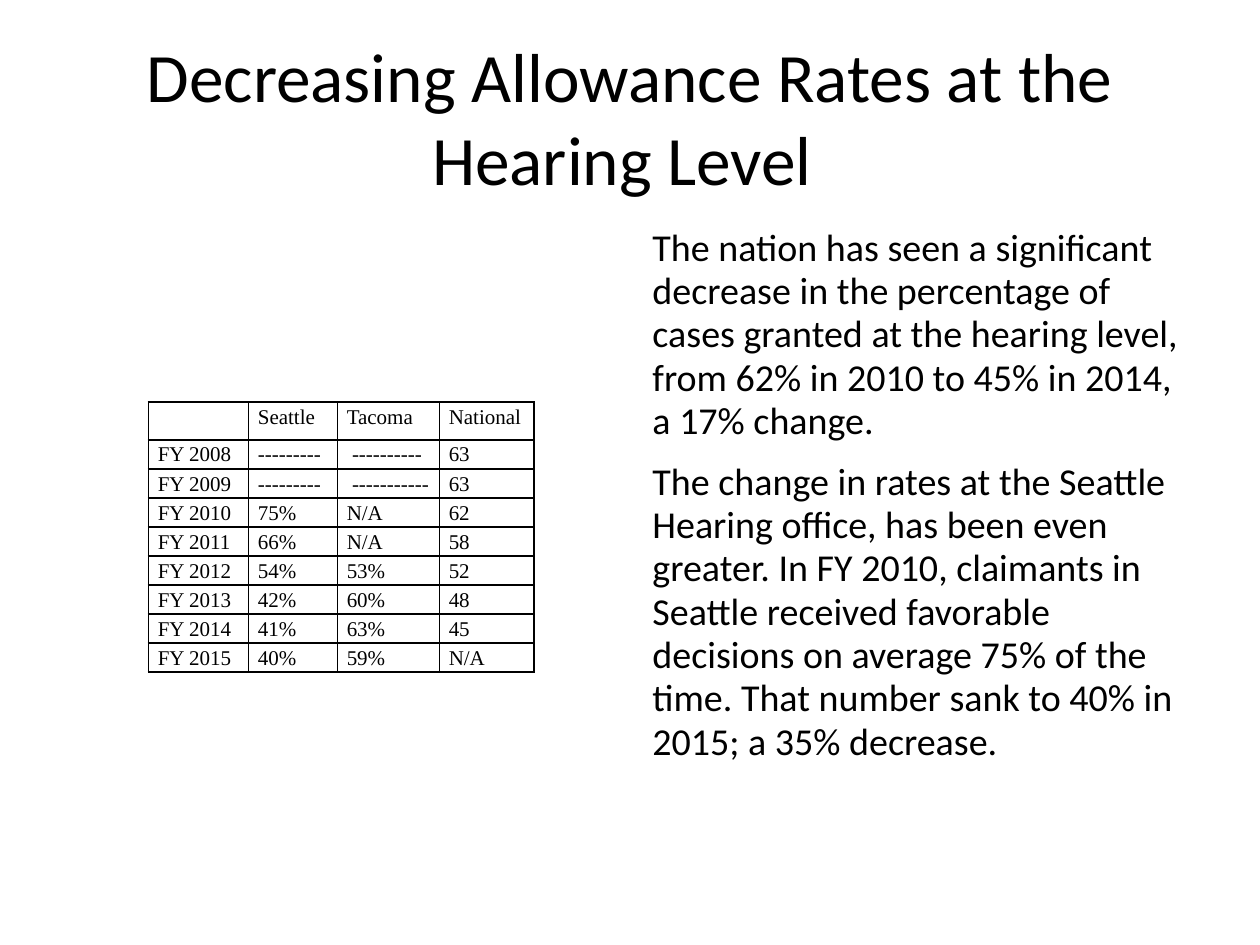
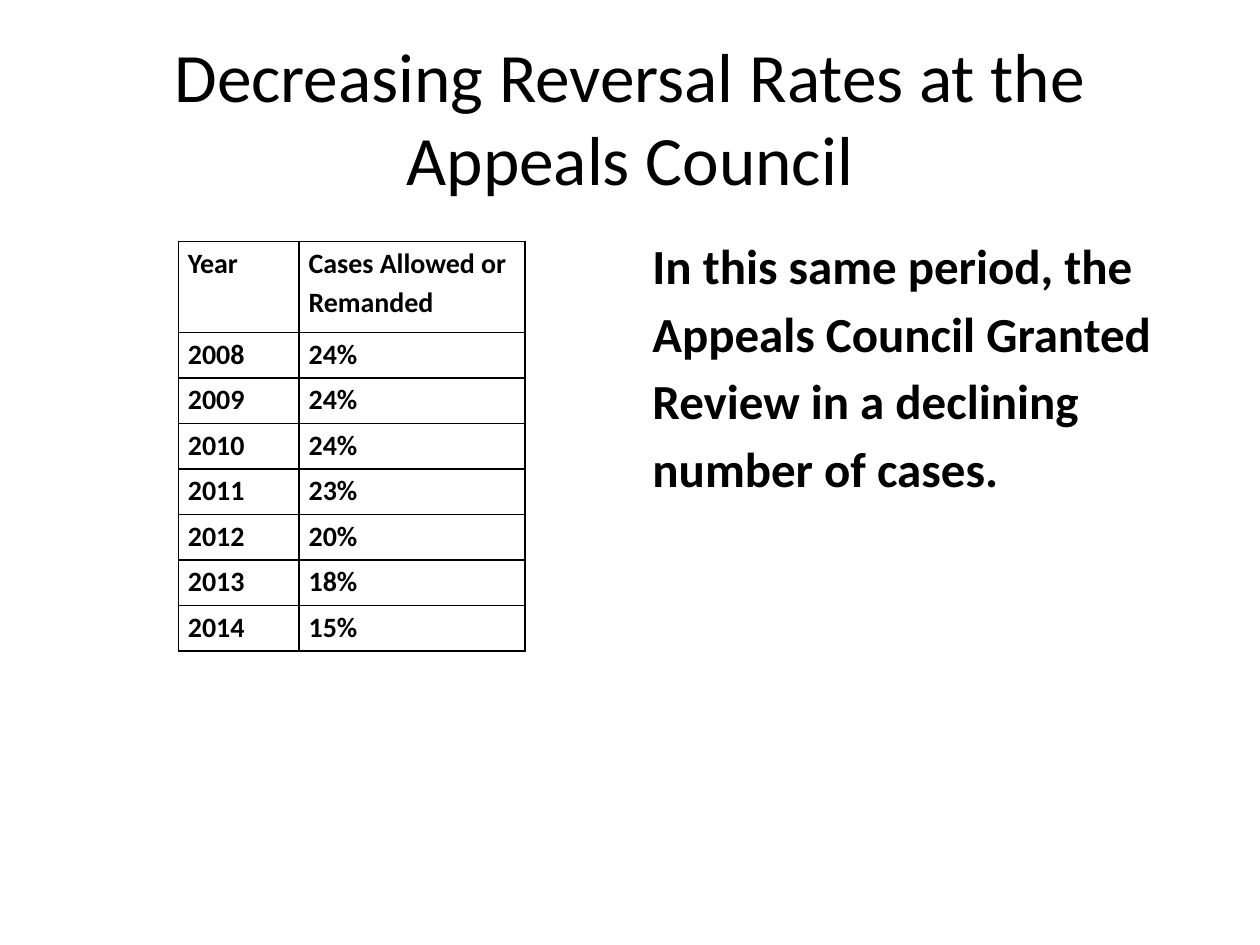
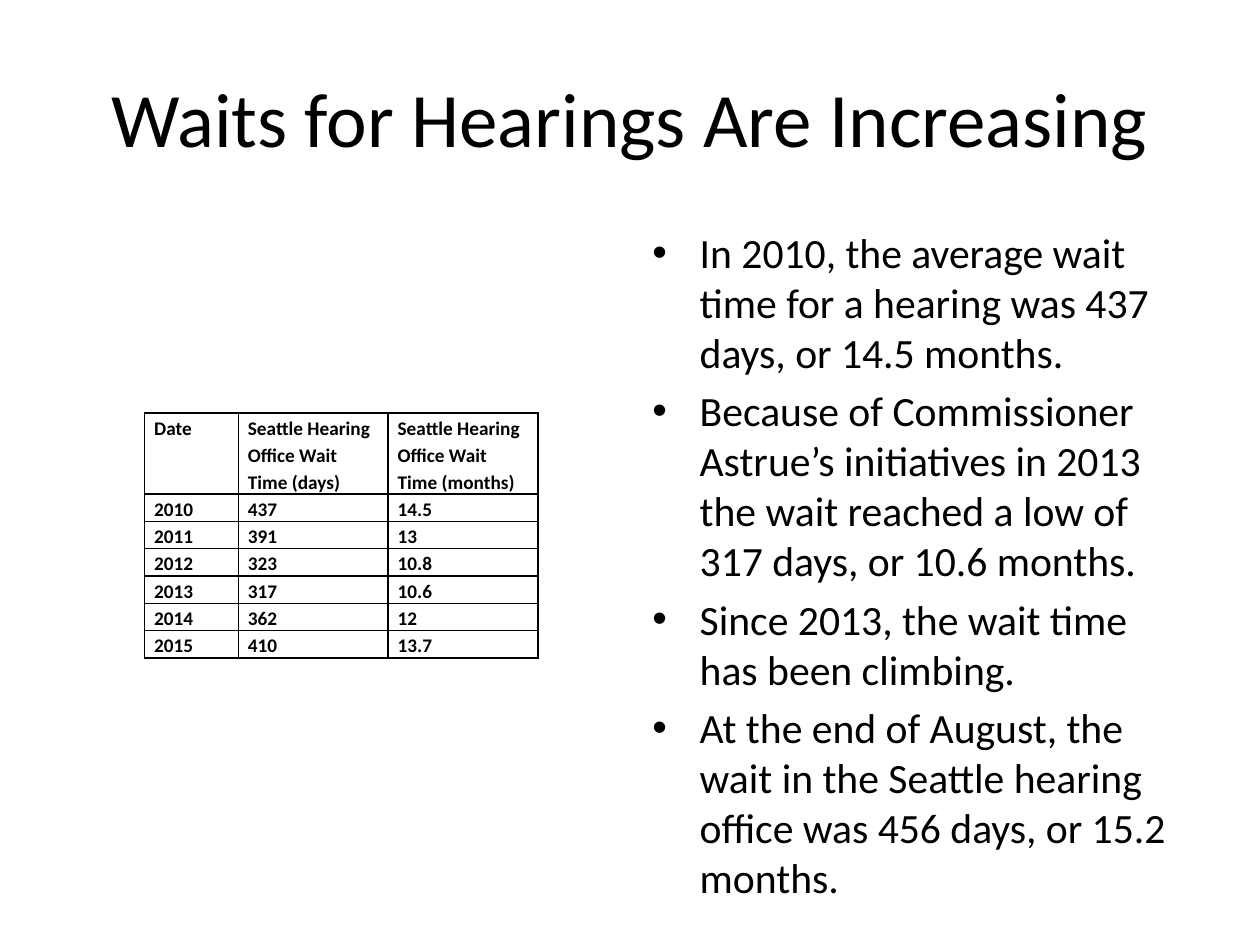
from dataclasses import dataclass
from lxml import etree
from pptx import Presentation
from pptx.dml.color import RGBColor
from pptx.enum import text as t
from pptx.oxml import ns
from pptx.util import Pt


@dataclass(frozen=True)
class Theme:
    ink: str = "000000"
    sans: str = "Calibri"
    serif: str = "Times New Roman"
    title: float = 39.6
    large: float = 44
    body: float = 21.7
    list: float = 23.8
    strong: float = 28
    rule: float = 1
    pad: float = 5.4
    indent: float = 27


THEME = Theme()
HEAD = (36, 21.6, 648, 90)
SIDE = (365.76, 126, 318.24, 356.4)


def write(frame, lines, size, font=THEME.sans, bold=False, align=t.PP_ALIGN.LEFT,
          lead=1.0, before=0, after=0, bullet=False):
    frame.word_wrap = True
    for i, line in enumerate(lines):
        para = frame.add_paragraph() if i else frame.paragraphs[0]
        para.alignment = align
        para.line_spacing = lead
        para.space_before = Pt(before)
        para.space_after = Pt(after)
        run = para.add_run()
        run.text = line
        run.font.size = Pt(size)
        run.font.name = font
        run.font.bold = bold
        run.font.color.rgb = RGBColor.from_string(THEME.ink)
        if bullet:
            props = para._p.get_or_add_pPr()
            props.set("marL", str(Pt(THEME.indent)))
            props.set("indent", str(-Pt(THEME.indent)))
            etree.SubElement(props, ns.qn("a:buFont"), typeface="Arial")
            etree.SubElement(props, ns.qn("a:buChar"), char="•")


def add_text(slide, box, lines, anchor=t.MSO_ANCHOR.TOP, **style):
    frame = slide.shapes.add_textbox(*map(Pt, box)).text_frame
    frame.vertical_anchor = anchor
    write(frame, lines, **style)


def add_rules(cell):
    props = cell._tc.get_or_add_tcPr()
    for side in ("lnL", "lnR", "lnT", "lnB"):
        line = etree.SubElement(props, ns.qn("a:" + side), w=str(Pt(THEME.rule)))
        fill = etree.SubElement(line, ns.qn("a:solidFill"))
        etree.SubElement(fill, ns.qn("a:srgbClr"), val=THEME.ink)


def add_grid(slide, spot, widths, rows, head, step, **style):
    heights = [head] + [step] * (len(rows) - 1)
    box = (*spot, sum(widths), sum(heights))
    table = slide.shapes.add_table(len(rows), len(widths), *map(Pt, box)).table
    table.first_row = table.horz_banding = False
    for col, width in zip(table.columns, widths):
        col.width = Pt(width)
    for row, height, words in zip(table.rows, heights, rows):
        row.height = Pt(height)
        for cell, word in zip(row.cells, words):
            cell.margin_left = cell.margin_right = Pt(THEME.pad)
            cell.margin_top = cell.margin_bottom = 0
            add_rules(cell)
            cell.fill.background()
            write(cell.text_frame, [word], lead=1.15, **style)


def add_page(deck, title, size, grid, side):
    slide = deck.slides.add_slide(deck.slide_layouts[6])
    add_text(slide, HEAD, [title], size=size, align=t.PP_ALIGN.CENTER,
             anchor=t.MSO_ANCHOR.MIDDLE)
    add_grid(slide, **grid)
    add_text(slide, SIDE, **side)


RATES = [
    ("", "Seattle", "Tacoma", "National"),
    ("FY 2008", "---------", " ----------", "63"),
    ("FY 2009", "---------", " -----------", "63"),
    ("FY 2010", "75%", "N/A", "62"),
    ("FY 2011", "66%", "N/A", "58"),
    ("FY 2012", "54%", "53%", "52"),
    ("FY 2013", "42%", "60%", "48"),
    ("FY 2014", "41%", "63%", "45"),
    ("FY 2015", "40%", "59%", "N/A"),
]
CASES = [
    ("Year", "Cases Allowed or Remanded"),
    ("2008", "24%"),
    ("2009", "24%"),
    ("2010", "24%"),
    ("2011", "23%"),
    ("2012", "20%"),
    ("2013", "18%"),
    ("2014", "15%"),
]
WAITS = [
    ("Date", "Seattle Hearing Office Wait Time (days)",
     "Seattle Hearing Office Wait Time (months)"),
    ("2010", "437", "14.5"),
    ("2011", "391", "13"),
    ("2012", "323", "10.8"),
    ("2013", "317", "10.6"),
    ("2014", "362", "12"),
    ("2015", "410", "13.7"),
]


def main():
    deck = Presentation()
    deck.slide_width, deck.slide_height = Pt(720), Pt(540)
    add_page(
        deck, "Decreasing Allowance Rates at the Hearing Level ", THEME.title,
        dict(spot=(84.8, 229.7), widths=(57.2, 50.8, 58.3, 54.2), rows=RATES,
             head=15.3, step=15.3, size=12, font=THEME.serif),
        dict(lines=[
            "The nation has seen a significant decrease in the percentage of cases "
            "granted at the hearing level, from 62% in 2010 to 45% in 2014, a 17% change.",
            "The change in rates at the Seattle Hearing office, has been even greater. "
            "In FY 2010, claimants in Seattle received favorable decisions on average "
            "75% of the time. That number sank to 40% in 2015; a 35% decrease.",
        ], size=THEME.body, lead=0.95, after=10))
    add_page(
        deck, "Decreasing Reversal Rates at the Appeals Council", THEME.title,
        dict(spot=(102, 138), widths=(69, 129), rows=CASES,
             head=52, step=26, size=16, bold=True),
        dict(lines=[
            "In this same period, the Appeals Council Granted Review in a declining "
            "number of cases.",
        ], size=THEME.strong, bold=True, lead=1.15, after=10))
    add_page(
        deck, "Waits for Hearings Are Increasing", THEME.large,
        dict(spot=(82.7, 236), widths=(53.6, 85.6, 85.6), rows=WAITS,
             head=46.4, step=15.6, size=11, bold=True),
        dict(lines=[
            "In 2010, the average wait time for a hearing was 437 days, or 14.5 months.",
            "Because of Commissioner Astrue’s initiatives in 2013 the wait reached a "
            "low of 317 days, or 10.6 months.",
            "Since 2013, the wait time has been climbing.",
            "At the end of August, the wait in the Seattle hearing office was 456 days, "
            "or 15.2 months.",
        ], size=THEME.list, before=4.8, bullet=True))
    deck.save("out.pptx")


if __name__ == "__main__":
    main()
